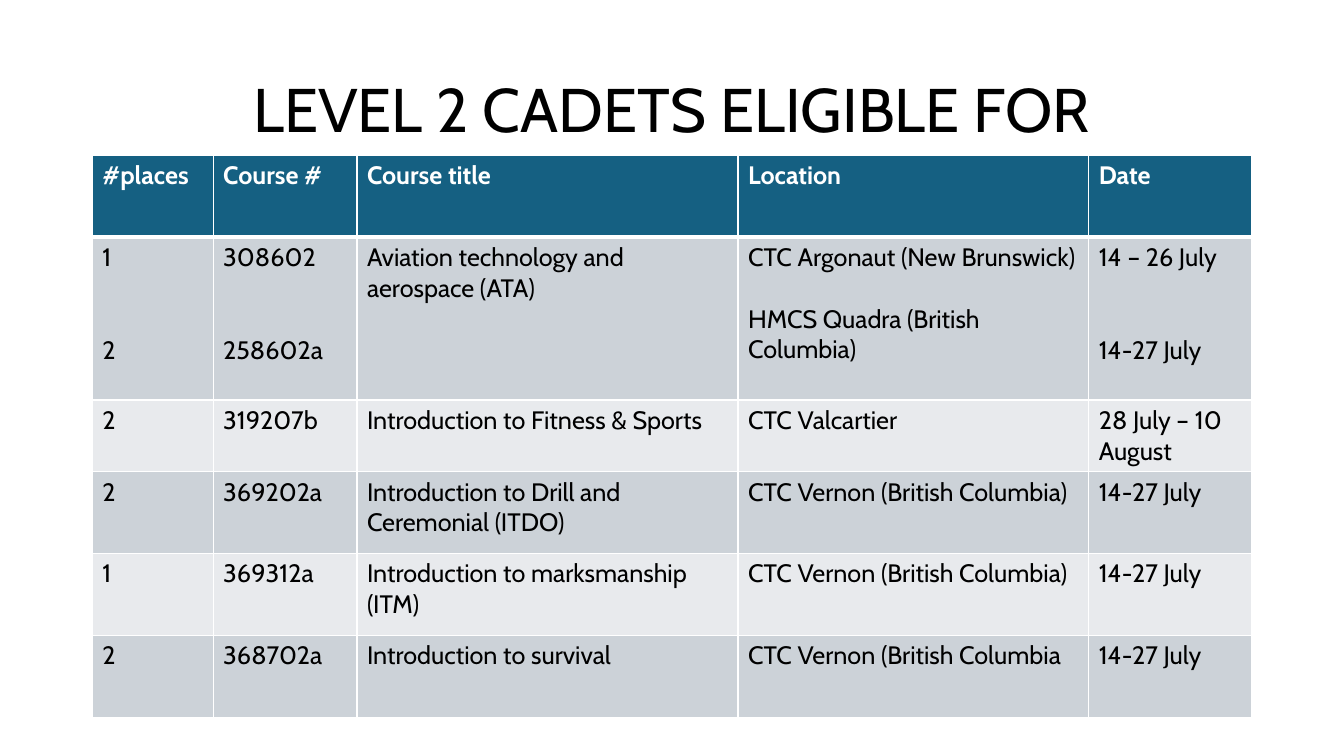
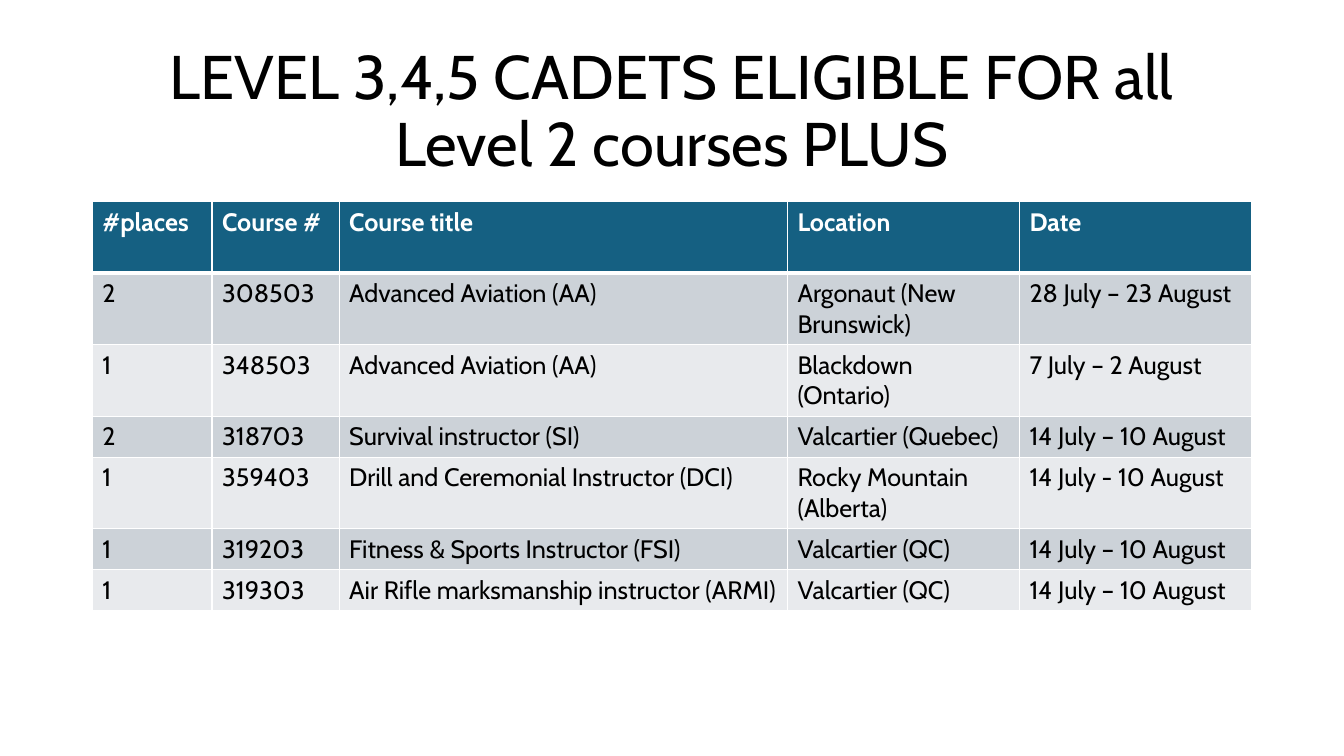
from dataclasses import dataclass
from itertools import cycle

from lxml.etree import SubElement
from pptx import Presentation
from pptx.dml.color import RGBColor
from pptx.enum.text import MSO_ANCHOR, MSO_AUTO_SIZE, PP_ALIGN
from pptx.oxml.ns import qn
from pptx.util import Emu, Pt

EMU_PER_PX = 9525
SLIDE_WIDTH, SLIDE_HEIGHT = 1280, 720
MARGIN = 88
CONTENT_WIDTH = SLIDE_WIDTH - 2 * MARGIN
TITLE_TOP, TITLE_HEIGHT = 38, 139
TITLE_ONLY_LAYOUT = 5


@dataclass(frozen=True)
class Theme:
    font: str = "Cabin"
    ink: str = "000000"
    paper: str = "FFFFFF"
    header: str = "156082"
    bands: tuple = ("CCD2D8", "E8EAED")
    title_size: int = 44
    table_size: int = 18
    line_height: int = 22
    grid_width: int = 1
    header_rule_width: int = 3


THEME = Theme()


@dataclass(frozen=True)
class Spaced:
    """Two entries in one cell, with a gap measured in text lines."""
    first: str
    second: str
    gap: int = 2


HEADINGS = ("#places", "Course #", "Course title", "Location", "Date")

LEVEL_2_COURSES = (
    (Spaced("1", "2"), Spaced("308602", "258602a"),
     "Aviation technology and aerospace (ATA)",
     Spaced("CTC Argonaut (New Brunswick)", "HMCS Quadra (British Columbia)", gap=1),
     Spaced("14 – 26 July", "14-27 July")),
    ("2", "319207b", "Introduction to Fitness & Sports", "CTC Valcartier",
     "28 July – 10 August"),
    ("2", "369202a", "Introduction to Drill and Ceremonial (ITDO)",
     "CTC Vernon (British Columbia)", "14-27 July"),
    ("1", "369312a", "Introduction to marksmanship (ITM)",
     "CTC Vernon (British Columbia)", "14-27 July"),
    ("2", "368702a", "Introduction to survival", "CTC Vernon (British Columbia",
     "14-27 July"),
)

SENIOR_COURSES = (
    ("2", "308503", "Advanced Aviation (AA)", "Argonaut (New Brunswick)",
     "28 July – 23 August"),
    ("1", "348503", "Advanced Aviation (AA)", "Blackdown (Ontario)",
     "7 July – 2 August"),
    ("2", "318703", "Survival instructor (SI)", "Valcartier (Quebec)",
     "14 July – 10 August"),
    ("1", "359403", "Drill and Ceremonial Instructor (DCI)",
     "Rocky Mountain (Alberta)", "14 July - 10 August"),
    ("1", "319203", "Fitness & Sports Instructor (FSI)", "Valcartier (QC)",
     "14 July – 10 August"),
    ("1", "319303", "Air Rifle marksmanship instructor (ARMI)", "Valcartier (QC)",
     "14 July – 10 August"),
)


def px(length):
    return Emu(length * EMU_PER_PX)


def write_text(paragraph, text, *, size=THEME.table_size, color=THEME.ink,
               bold=False, align=PP_ALIGN.LEFT, line_spacing=1.0, space_before=0):
    paragraph.alignment = align
    paragraph.line_spacing = line_spacing
    paragraph.space_before = Pt(space_before)
    run = paragraph.add_run()
    run.text = text
    run.font.name = THEME.font
    run.font.size = Pt(size)
    run.font.bold = bold
    run.font.color.rgb = RGBColor.from_string(color)


# Title
def add_title(slide, text):
    title = slide.shapes.title
    title.left, title.top = px(MARGIN), px(TITLE_TOP)
    title.width, title.height = px(CONTENT_WIDTH), px(TITLE_HEIGHT)
    frame = title.text_frame
    frame.word_wrap = True
    frame.auto_size = MSO_AUTO_SIZE.NONE
    frame.vertical_anchor = MSO_ANCHOR.MIDDLE
    write_text(frame.paragraphs[0], text, size=THEME.title_size,
               align=PP_ALIGN.CENTER, line_spacing=0.9)


# Table cells
def set_borders(cell, top, bottom):
    properties = cell._tc.get_or_add_tcPr()
    widths = {"a:lnL": THEME.grid_width, "a:lnR": THEME.grid_width,
              "a:lnT": top, "a:lnB": bottom}
    for tag, width in widths.items():
        line = SubElement(properties, qn(tag), w=str(Pt(width)))
        fill = SubElement(line, qn("a:solidFill"))
        SubElement(fill, qn("a:srgbClr"), val=THEME.paper)


def fill_cell(cell, content, fill, *, top=THEME.grid_width,
              bottom=THEME.grid_width, **text_format):
    set_borders(cell, top, bottom)
    cell.fill.solid()
    cell.fill.fore_color.rgb = RGBColor.from_string(fill)
    frame = cell.text_frame
    if isinstance(content, Spaced):
        write_text(frame.paragraphs[0], content.first, **text_format)
        write_text(frame.add_paragraph(), content.second,
                   space_before=content.gap * THEME.line_height, **text_format)
    else:
        write_text(frame.paragraphs[0], content, **text_format)


# Course table
def add_course_table(slide, courses, top, column_widths, row_heights):
    table = slide.shapes.add_table(
        len(row_heights), len(column_widths), px(MARGIN), px(top),
        px(sum(column_widths)), px(sum(row_heights))).table
    for column, width in zip(table.columns, column_widths):
        column.width = px(width)
    for row, height in zip(table.rows, row_heights):
        row.height = px(height)

    for cell, heading in zip(table.rows[0].cells, HEADINGS):
        fill_cell(cell, heading, THEME.header, bottom=THEME.header_rule_width,
                  color=THEME.paper, bold=True)
    for index, (course, band) in enumerate(zip(courses, cycle(THEME.bands)), start=1):
        rule = THEME.header_rule_width if index == 1 else THEME.grid_width
        for cell, content in zip(table.rows[index].cells, course):
            fill_cell(cell, content, band, top=rule)


def add_course_slide(presentation, title, courses, **layout):
    slide = presentation.slides.add_slide(
        presentation.slide_layouts[TITLE_ONLY_LAYOUT])
    add_title(slide, title)
    add_course_table(slide, courses, **layout)


def main():
    presentation = Presentation()
    presentation.slide_width = px(SLIDE_WIDTH)
    presentation.slide_height = px(SLIDE_HEIGHT)

    add_course_slide(
        presentation, "LEVEL 2 CADETS ELIGIBLE FOR", LEVEL_2_COURSES, top=148,
        column_widths=(115, 137, 363, 334, 155),
        row_heights=(78, 155, 68, 78, 78, 78))
    add_course_slide(
        presentation, "LEVEL 3,4,5 CADETS ELIGIBLE FOR all Level 2 courses PLUS",
        SENIOR_COURSES, top=192,
        column_widths=(114, 121, 427, 221, 221),
        row_heights=(68, 68, 68, 39, 68, 39, 39))

    presentation.save("out.pptx")


if __name__ == "__main__":
    main()
